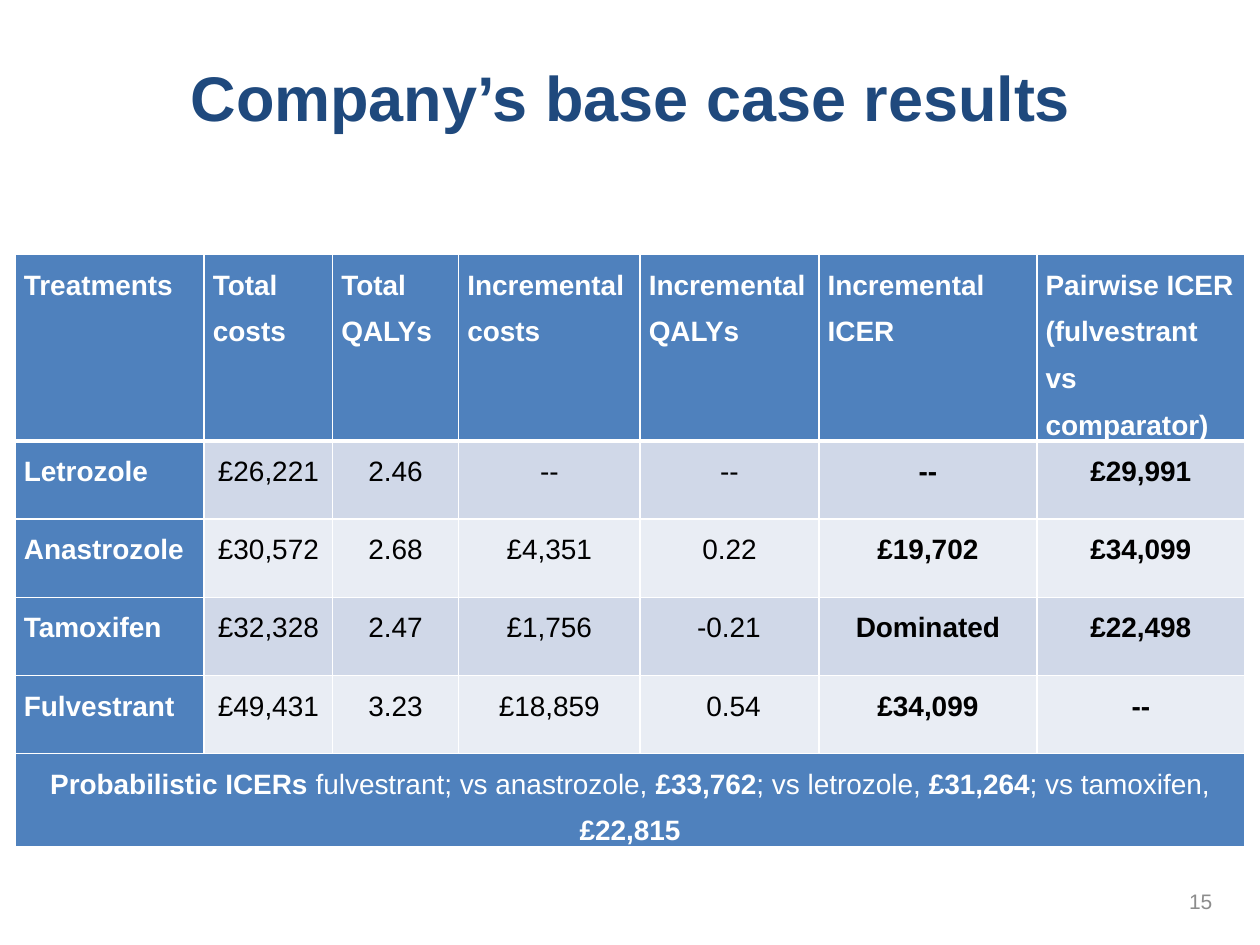
from lxml.etree import SubElement as Sub
from pptx import Presentation
from pptx.dml.color import RGBColor
from pptx.enum.text import MSO_ANCHOR as Anchor, PP_ALIGN as Align
from pptx.oxml.ns import qn
from pptx.util import Inches, Pt

BLUE, WHITE, BLACK = "4F81BD", "FFFFFF", "000000"
BANDS = ["D0D8E8", "E9EDF4"]
WIDTHS = [1.5, 1.02, 1, 1.44, 1.42, 1.73, 1.65]
HEIGHTS = [1.32] + [0.62] * 5
HEADS = ["Treatments", "Total costs", "Total QALYs", "Incremental costs",
         "Incremental QALYs", "Incremental ICER",
         "Pairwise ICER (fulvestrant vs comparator)"]
ROWS = [
    ["Letrozole", "£26,221", "2.46", "--", "--", "--", "£29,991"],
    ["Anastrozole", "£30,572", "2.68", "£4,351", "0.22", "£19,702", "£34,099"],
    ["Tamoxifen", "£32,328", "2.47", "£1,756", "\t-0.21", "Dominated", "£22,498"],
    ["Fulvestrant", "£49,431", "3.23", "£18,859", "\t0.54", "£34,099", "--"],
]
NOTE = ["Probabilistic ICERs ", "fulvestrant; vs anastrozole, ", "£33,762",
        "; vs letrozole, ", "£31,264", "; vs tamoxifen, ", "£22,815"]


def paint(color):
    return RGBColor.from_string(color)


def style(para, size, color, bold=None, align=None):
    font = para.font
    font.name, font.size, font.bold = "Arial", Pt(size), bold
    font.color.rgb = paint(color)
    para.alignment = align


def add_title(slide, box, text):
    title = slide.shapes.title
    title.left, title.top, title.width, title.height = map(Inches, box)
    frame = title.text_frame
    frame.text = text
    frame.vertical_anchor = Anchor.MIDDLE
    para = frame.paragraphs[0]
    para.line_spacing = 0.9
    style(para, 36, "1F497D", True, Align.CENTER)


def add_edges(cell, top, bottom):
    props = cell._tc.get_or_add_tcPr()
    for side, width in (("L", 1), ("R", 1), ("T", top), ("B", bottom)):
        line = Sub(props, qn(f"a:ln{side}"), w=str(Pt(width)))
        Sub(Sub(line, qn("a:solidFill")), qn("a:srgbClr"), val=WHITE)


def add_tab(para, inches):
    tabs = Sub(para._p.get_or_add_pPr(), qn("a:tabLst"))
    Sub(tabs, qn("a:tab"), pos=str(Inches(inches)), algn="dec")


def fill_cell(cell, text, fill, color, bold, align):
    cell.margin_left = cell.margin_right = Inches(0.07)
    cell.margin_top = cell.margin_bottom = 0
    cell.fill.solid()
    cell.fill.fore_color.rgb = paint(fill)
    cell.text = text
    para = cell.text_frame.paragraphs[0]
    para.line_spacing = 1.5
    if text.startswith("\t"):
        add_tab(para, 0.58)
        align = Align.LEFT
    style(para, 16, color, bold, align)


def add_note(cell, parts):
    fill_cell(cell, "", BLUE, WHITE, None, Align.CENTER)
    para = cell.text_frame.paragraphs[0]
    for i, part in enumerate(parts):
        run = para.add_run()
        run.text = part
        run.font.bold = i % 2 == 0


def add_results(slide, box):
    shape = slide.shapes.add_table(len(HEIGHTS), len(WIDTHS), *map(Inches, box))
    table = shape.table
    table.horz_banding = False
    for col, width in zip(table.columns, WIDTHS):
        col.width = Inches(width)
    for row, height in zip(table.rows, HEIGHTS):
        row.height = Inches(height)
    for r, row in enumerate(table.rows):
        for cell in row.cells:
            add_edges(cell, 3 if r == 1 else 1, 3 if r == 0 else 1)
    for r, row in enumerate([HEADS] + ROWS):
        for c, text in enumerate(row):
            if r == 0 or c == 0:
                look = BLUE, WHITE, True, Align.LEFT
            else:
                look = BANDS[(r - 1) % 2], BLACK, c > 4, Align.CENTER
            fill_cell(table.cell(r, c), text, *look)
    last = len(HEIGHTS) - 1
    foot = table.cell(last, 0)
    foot.merge(table.cell(last, len(WIDTHS) - 1))
    add_note(foot, NOTE)


def add_number(slide, box, text):
    frame = slide.shapes.add_textbox(*map(Inches, box)).text_frame
    frame.word_wrap = True
    frame.vertical_anchor = Anchor.MIDDLE
    frame.text = text
    style(frame.paragraphs[0], 12, "8C8C8C", align=Align.RIGHT)


def main():
    deck = Presentation()
    deck.slide_width, deck.slide_height = Inches(10), Inches(7.5)
    slide = deck.slides.add_slide(deck.slide_layouts[5])
    add_title(slide, (0.28, 0.29, 9.45, 1.03), "Company’s base case results")
    add_results(slide, (0.12, 2.02, 9.76, sum(HEIGHTS)))
    add_number(slide, (7.47, 6.95, 2.25, 0.4), "15")
    deck.save("out.pptx")


if __name__ == "__main__":
    main()
